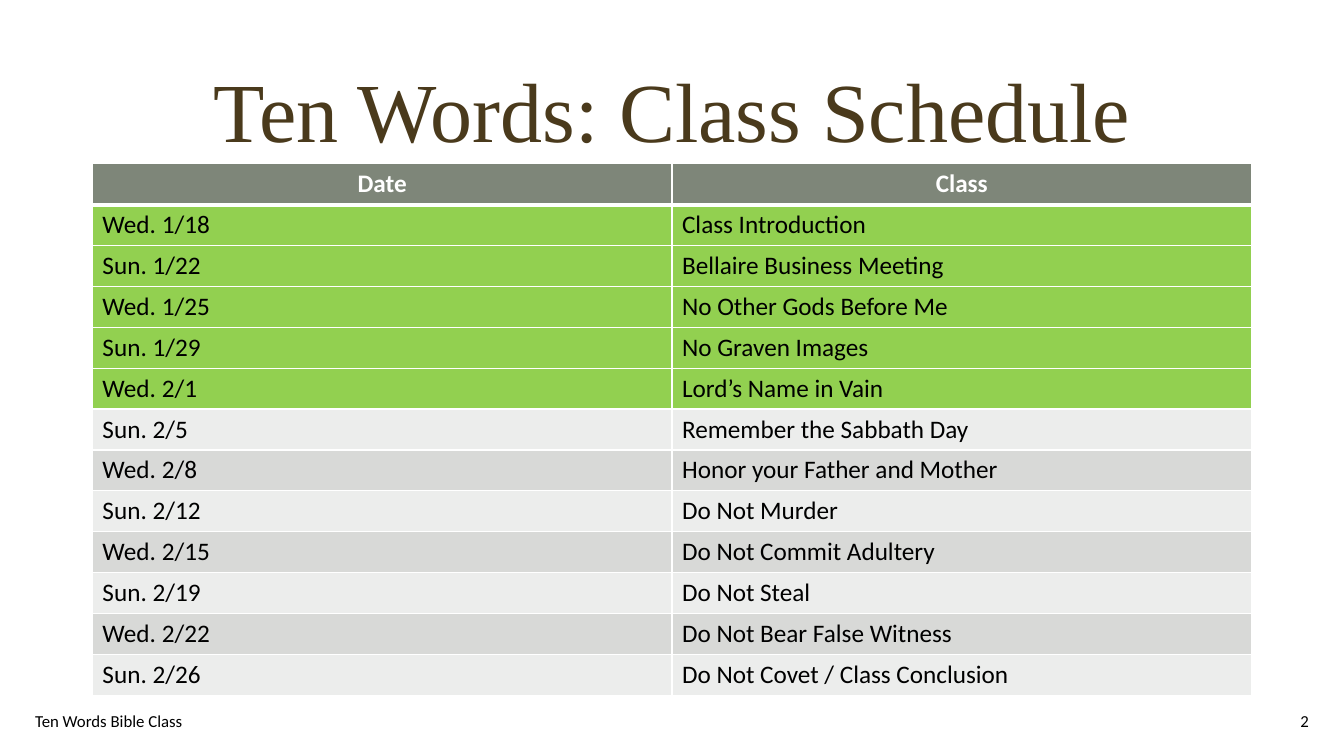
from lxml.etree import SubElement
from pptx import Presentation
from pptx.dml.color import RGBColor
from pptx.enum.text import MSO_ANCHOR, PP_ALIGN
from pptx.oxml import parse_xml
from pptx.oxml.ns import nsdecls, qn
from pptx.util import Inches, Pt

COLORS = {
    "title": "4A3A1C", "header": "7E8679", "done": "92D050",
    "light": "ECEDEC", "dark": "D8D9D7", "text": "000000", "white": "FFFFFF",
}
GRID_COLS, GRID_ROWS = 160, 90
CLASSES_DONE = 5
SCHEDULE = [
    ("Date", "Class"),
    ("Wed. 1/18", "Class Introduction"),
    ("Sun. 1/22", "Bellaire Business Meeting"),
    ("Wed. 1/25", "No Other Gods Before Me"),
    ("Sun. 1/29", "No Graven Images"),
    ("Wed. 2/1", "Lord’s Name in Vain"),
    ("Sun. 2/5", "Remember the Sabbath Day"),
    ("Wed. 2/8", "Honor your Father and Mother"),
    ("Sun. 2/12", "Do Not Murder"),
    ("Wed. 2/15", "Do Not Commit Adultery"),
    ("Sun. 2/19", "Do Not Steal"),
    ("Wed. 2/22", "Do Not Bear False Witness"),
    ("Sun. 2/26", "Do Not Covet / Class Conclusion"),
]


def rgb(name):
    return RGBColor.from_string(COLORS[name])


def write(tf, text, size=18, font="Calibri", color="text", bold=False,
          align=PP_ALIGN.LEFT, anchor=None, spacing=None):
    tf.word_wrap = True
    if anchor is not None:
        tf.vertical_anchor = anchor
    p = tf.paragraphs[0]
    p.alignment = align
    p.line_spacing = spacing
    r = p.add_run()
    r.text = text
    r.font.size, r.font.name, r.font.bold = Pt(size), font, bold
    r.font.color.rgb = rgb(color)


def set_borders(cell, top=1, bottom=1):
    """Draw white cell borders, with widths in points."""
    tc_pr = cell._tc.get_or_add_tcPr()
    widths = {"lnL": 1, "lnR": 1, "lnT": top, "lnB": bottom}
    for i, (tag, width) in enumerate(widths.items()):
        ln = parse_xml(f'<a:{tag} {nsdecls("a")} w="{Pt(width)}"/>')
        fill = SubElement(ln, qn("a:solidFill"))
        SubElement(fill, qn("a:srgbClr"), val=COLORS["white"])
        tc_pr.insert(i, ln)


def row_color(row):
    if row == 0:
        return "header"
    if row <= CLASSES_DONE:
        return "done"
    return "dark" if row % 2 else "light"


class ScheduleSlide:
    """Slide builder whose boxes are (column, row, columns, rows) on the grid."""

    def __init__(self, prs):
        self.col = prs.slide_width / GRID_COLS
        self.row = prs.slide_height / GRID_ROWS
        self.s = prs.slides.add_slide(prs.slide_layouts[5])

    def place(self, x, y, w, h):
        return (int(x * self.col), int(y * self.row),
                int(w * self.col), int(h * self.row))

    def title(self, text, *box):
        sp = self.s.shapes.title
        sp.left, sp.top, sp.width, sp.height = self.place(*box)
        write(sp.text_frame, text, size=60, font="Times New Roman", color="title",
              align=PP_ALIGN.CENTER, anchor=MSO_ANCHOR.MIDDLE, spacing=0.9)

    def footer(self, text, *box, align=PP_ALIGN.LEFT):
        sp = self.s.shapes.add_textbox(*self.place(*box))
        write(sp.text_frame, text, size=12, align=align, anchor=MSO_ANCHOR.MIDDLE)

    def table(self, rows, *box):
        table = self.s.shapes.add_table(
            len(rows), len(rows[0]), *self.place(*box)).table
        for i, values in enumerate(rows):
            header = i == 0
            for j, value in enumerate(values):
                cell = table.cell(i, j)
                cell.fill.solid()
                cell.fill.fore_color.rgb = rgb(row_color(i))
                set_borders(cell, top=3 if i == 1 else 1, bottom=3 if header else 1)
                write(cell.text_frame, value, bold=header,
                      color="white" if header else "text",
                      align=PP_ALIGN.CENTER if header else PP_ALIGN.LEFT)


def main():
    prs = Presentation()
    prs.slide_width, prs.slide_height = Inches(13.33), Inches(7.5)
    slide = ScheduleSlide(prs)
    slide.title("Ten Words: Class Schedule", 11, 5, 138, 17.4)
    slide.table(SCHEDULE, 11, 19.5, 138, 62.4)
    slide.footer("Ten Words Bible Class", 3, 83.4, 54, 4.8)
    slide.footer("2", 121, 83.4, 36, 4.8, align=PP_ALIGN.RIGHT)
    prs.save("out.pptx")


if __name__ == "__main__":
    main()
